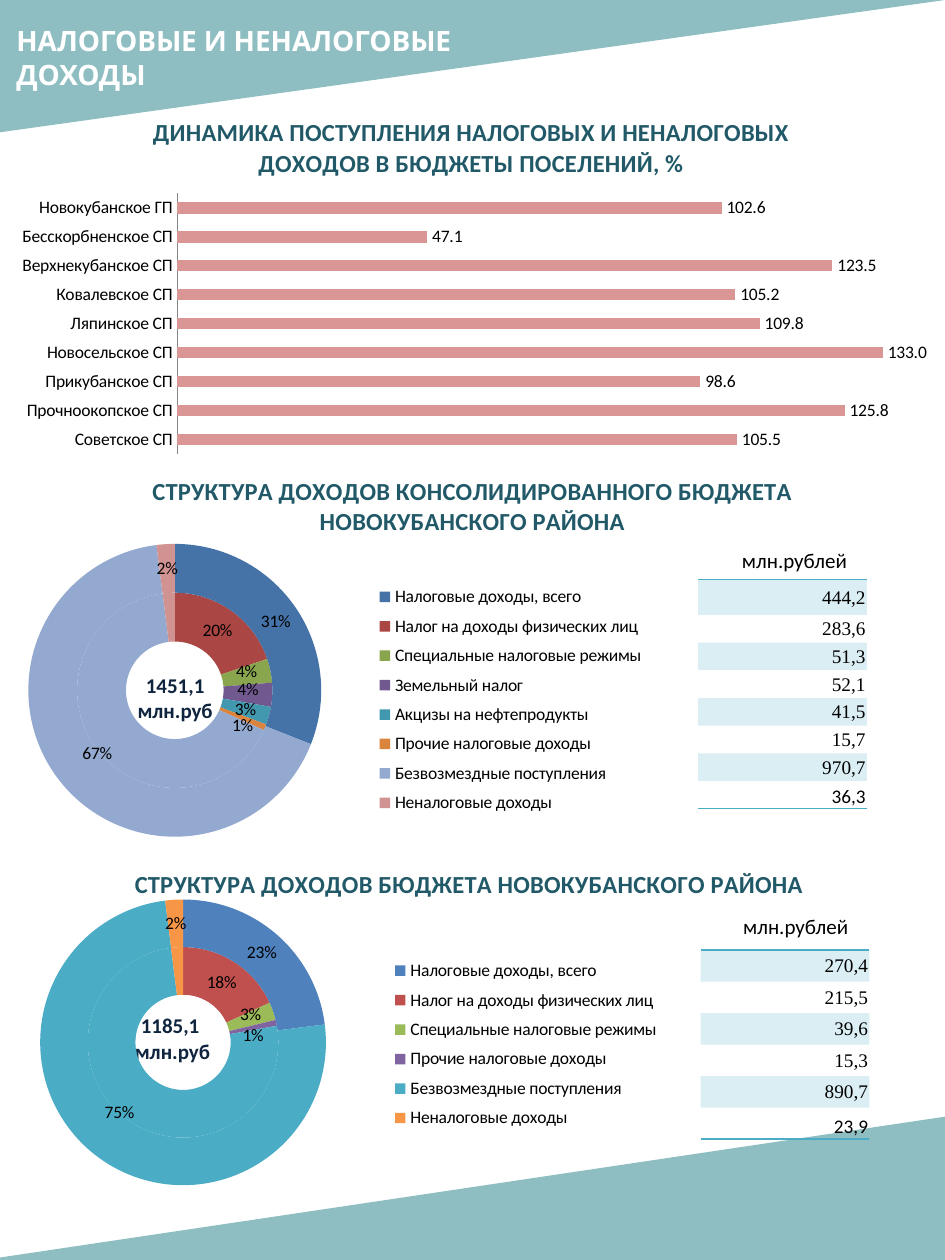
from dataclasses import dataclass

from lxml import etree
from pptx import Presentation
from pptx.chart import data
from pptx.dml import color
from pptx.enum import chart as kinds, shapes, text
from pptx.oxml import ns, parse_xml
from pptx.util import Inches, Pt


@dataclass(frozen=True)
class Theme:
    band: str = "519AA0"
    white: str = "FFFFFF"
    ink: str = "000000"
    navy: str = "0F243E"
    heading: str = "215968"
    bar: str = "D99694"
    axis: str = "868686"
    accent: str = "4BACC6"
    muted: tuple = ("4572A7", "AA4643", "89A54E", "71588F", "4198AF", "DB843D", "93A9CF", "D19392")
    bright: tuple = ("4F81BD", "C0504D", "9BBB59", "8064A2", "4BACC6", "F79646")
    title_face: str = "Karla"
    face: str = "Calibri"
    figure_face: str = "Times New Roman"
    title_size: int = 16
    heading_size: int = 14
    note_size: int = 12
    figure_size: int = 11
    chart_size: int = 10


def rgb(value):
    return color.RGBColor.from_string(value)


def chart_xml(tag, body):
    return parse_xml(f'<c:{tag} {ns.nsdecls("c", "a")}>{body}</c:{tag}>')


def manual_layout(parts):
    fields = "".join(f'<c:{name} val="{value}"/>' for name, value in parts)
    return chart_xml("layout", f"<c:manualLayout>{fields}</c:manualLayout>")


def box_layout(box, inner=False):
    target = [("layoutTarget", "inner")] if inner else []
    modes = [("xMode", "edge"), ("yMode", "edge")]
    return manual_layout(target + modes + list(zip("xywh", box)))


def hidden_label(index):
    return chart_xml("dLbl", f'<c:idx val="{index}"/><c:delete val="1"/>')


def moved_label(index, shift):
    flags = "".join(f'<c:show{part} val="{int(part == "Percent")}"/>' for part in
                    ("LegendKey", "Val", "CatName", "SerName", "Percent", "BubbleSize"))
    label = chart_xml("dLbl", f'<c:idx val="{index}"/>{flags}')
    label.insert(1, manual_layout(zip("xy", shift)))
    return label


class BudgetSlide:
    """Draws the elements of a budget page in one theme."""

    def __init__(self, slide, theme):
        self.slide, self.theme = slide, theme

    def style(self, font, size, face, ink, bold=False):
        font.size, font.name, font.bold = Pt(size), face, bold
        font.color.rgb = rgb(ink)

    def translucent(self, fill, ink, percent):
        fill.solid()
        fill.fore_color.rgb = rgb(ink)
        tone = fill._xPr.find(".//" + ns.qn("a:srgbClr"))
        etree.SubElement(tone, ns.qn("a:alpha"), val=str(percent * 1000))

    def wedge(self, box, flip):
        wedge = self.slide.shapes.add_shape(shapes.MSO_SHAPE.RIGHT_TRIANGLE, *map(Inches, box))
        wedge.rotation = 180
        wedge._element.spPr.find(ns.qn("a:xfrm")).set(flip, "1")
        wedge.shadow.inherit = False
        wedge.line.fill.background()
        self.translucent(wedge.fill, self.theme.band, 64)

    def title(self, words, box):
        title = self.slide.shapes.title
        self.slide.shapes._spTree.append(title._element)
        title.left, title.top, title.width, title.height = map(Inches, box)
        frame = title.text_frame
        frame.text = words
        frame.vertical_anchor = text.MSO_ANCHOR.TOP
        frame.auto_size = text.MSO_AUTO_SIZE.SHAPE_TO_FIT_TEXT
        line = frame.paragraphs[0]
        line.alignment = text.PP_ALIGN.LEFT
        self.style(line.font, self.theme.title_size, self.theme.title_face, self.theme.white, True)

    def note(self, words, box, ink, bold=False, wrap=True):
        frame = self.slide.shapes.add_textbox(*map(Inches, box)).text_frame
        frame.text = words
        frame.word_wrap = wrap
        frame.auto_size = text.MSO_AUTO_SIZE.SHAPE_TO_FIT_TEXT
        for line in frame.paragraphs:
            line.alignment = text.PP_ALIGN.CENTER if wrap else text.PP_ALIGN.LEFT
            self.style(line.font, self.theme.note_size, self.theme.face, ink, bold)

    def border(self, cell, side):
        cell._tc.get_or_add_tcPr().insert(0, parse_xml(
            f'<a:{side} {ns.nsdecls("a")} w="12700"><a:solidFill>'
            f'<a:srgbClr val="{self.theme.accent}"/></a:solidFill></a:{side}>'))

    def amounts(self, values, left, top, heights):
        frame = self.slide.shapes.add_table(
            len(values), 1, Inches(left), Inches(top), Inches(1.34), Inches(sum(heights)))
        table = frame.table
        table.first_row = table.horz_banding = False
        table._tbl.tblPr.find(ns.qn("a:tableStyleId")).text = "{2D5ABB26-0587-4C30-8999-92F81FD0307C}"
        last = len(values) - 1
        for row, (value, height) in enumerate(zip(values, heights)):
            table.rows[row].height = Inches(height)
            cell = table.cell(row, 0)
            cell.text = value
            cell.margin_left = cell.margin_right = cell.margin_top = Inches(0.01)
            cell.margin_bottom = 0
            cell.vertical_anchor = text.MSO_ANCHOR.BOTTOM if row == last else text.MSO_ANCHOR.MIDDLE
            line = cell.text_frame.paragraphs[0]
            line.alignment = text.PP_ALIGN.RIGHT
            face = self.theme.face if row == last else self.theme.figure_face
            self.style(line.font, self.theme.figure_size, face, self.theme.ink)
            if row % 2:
                cell.fill.background()
            else:
                self.translucent(cell.fill, self.theme.accent, 20)
        self.border(table.cell(0, 0), "lnT")
        self.border(table.cell(last, 0), "lnB")

    def chart(self, kind, heading, box, names, rows):
        source = data.CategoryChartData()
        source.categories = names
        for number, values in enumerate(rows, 1):
            source.add_series(f"Series {number}", values)
        chart = self.slide.shapes.add_chart(kind, *map(Inches, box), source).chart
        self.style(chart.font, self.theme.chart_size, self.theme.face, self.theme.ink)
        chart._chartSpace.chart.addnext(chart_xml("spPr", "<a:noFill/><a:ln><a:noFill/></a:ln>"))
        chart.has_title = True
        chart.chart_title.include_in_layout = False
        chart.chart_title.text_frame.text = heading
        line = chart.chart_title.text_frame.paragraphs[0]
        self.style(line.font, self.theme.heading_size, self.theme.face, self.theme.heading, True)
        chart.has_legend = False
        return chart

    def bars(self, heading, box, growth):
        chart = self.chart(kinds.XL_CHART_TYPE.BAR_CLUSTERED, heading, box, list(growth), [list(growth.values())])
        plot = chart.plots[0]
        plot.gap_width, plot.overlap, plot.vary_by_categories = 150, -25, False
        settlements = chart.category_axis
        settlements.reverse_order = True
        settlements.major_tick_mark = kinds.XL_TICK_MARK.NONE
        settlements.format.line.color.rgb = rgb(self.theme.axis)
        chart.value_axis.visible = chart.value_axis.has_major_gridlines = False
        chart.value_axis.minimum_scale = 0
        series = plot.series[0]
        series.format.fill.solid()
        series.format.fill.fore_color.rgb = rgb(self.theme.bar)
        labels = series.data_labels
        labels.show_value = True
        labels.number_format, labels.number_format_is_linked = "#,##0.0", False

    def rings(self, heading, box, names, rows, colors, plot_box, legend_box, inner_shifts, grant_shift):
        chart = self.chart(kinds.XL_CHART_TYPE.DOUGHNUT, heading, box, names, rows)
        chart.plots[0].vary_by_categories = True
        grants = len(names) - 2
        inner = [moved_label(index, shift) for index, shift in inner_shifts.items()]
        inner += [hidden_label(grants), hidden_label(grants + 1)]
        for series, special in zip(chart.plots[0].series, (inner, [moved_label(grants, grant_shift)])):
            for index, ink in enumerate(colors):
                fill = series.points[index].format.fill
                fill.solid()
                fill.fore_color.rgb = rgb(ink)
            labels = series.data_labels
            labels.show_value, labels.show_percentage = False, True
            labels.number_format, labels.number_format_is_linked = "0%", False
            for place, label in enumerate(special):
                labels._element.insert(place, label)
        chart.has_legend = True
        chart.legend.position = kinds.XL_LEGEND_POSITION.RIGHT
        chart.legend.include_in_layout = False
        area, legend = chart._chartSpace.chart.plotArea, chart.legend._element
        for holder in (area, legend):
            for old in holder.findall(ns.qn("c:layout")):
                holder.remove(old)
        area.insert(0, box_layout(plot_box, True))
        legend.find(ns.qn("c:overlay")).addprevious(box_layout(legend_box))


def main():
    deck = Presentation()
    deck.slide_width, deck.slide_height = Inches(7.5), Inches(10)
    theme = Theme()
    page = BudgetSlide(deck.slides.add_slide(deck.slide_layouts[5]), theme)
    page.wedge((0, 0, 7.5, 1.05), "flipH")
    page.wedge((-0.13, 8.86, 7.65, 1.14), "flipV")
    page.title("НАЛОГОВЫЕ И НЕНАЛОГОВЫЕ ДОХОДЫ", (0.03, 0.14, 4.51, 0.64))
    page.note("1451,1 млн.руб", (0.95, 5.29, 0.88, 0.5), theme.navy, True)
    page.note("1185,1\n млн.руб", (0.91, 7.99, 0.88, 0.5), theme.navy, True)
    page.amounts("444,2 283,6 51,3 52,1 41,5 15,7 970,7 36,3".split(), 5.54, 4.6, [0.28] + [0.22] * 7)
    page.amounts("270,4 215,5 39,6 15,3 890,7 23,9".split(), 5.56, 7.54, [0.25] * 6)
    for left, top in ((5.79, 4.3), (5.8, 7.2)):
        page.note("млн.рублей", (left, top, 1.07, 0.3), theme.ink, wrap=False)
    page.bars("ДИНАМИКА ПОСТУПЛЕНИЯ НАЛОГОВЫХ И НЕНАЛОГОВЫХ ДОХОДОВ В БЮДЖЕТЫ ПОСЕЛЕНИЙ, %",
              (0.03, 0.77, 7.42, 2.89),
              {"Новокубанское ГП": 102.6, "Бесскорбненское СП": 47.1, "Верхнекубанское СП": 123.5,
               "Ковалевское СП": 105.2, "Ляпинское СП": 109.8, "Новосельское СП": 133,
               "Прикубанское СП": 98.6, "Прочноокопское СП": 125.8, "Советское СП": 105.5})
    taxes = ["Налоговые доходы, всего", "Налог на доходы физических лиц", "Специальные налоговые режимы"]
    others = ["Прочие налоговые доходы", "Безвозмездные поступления", "Неналоговые доходы"]
    page.rings("СТРУКТУРА ДОХОДОВ КОНСОЛИДИРОВАННОГО БЮДЖЕТА НОВОКУБАНСКОГО РАЙОНА",
               (0, 3.61, 7.5, 3.04), taxes + ["Земельный налог", "Акцизы на нефтепродукты"] + others,
               [[None, 20, 4, 4, 3, 1, 67, 2], [31] + [None] * 5 + [67, 2]], theme.muted,
               (0.03, 0.23, 0.31, 0.77), (0.39, 0.32, 0.3, 0.64),
               {2: (0, -0.01), 3: (0, -0.01), 5: (0, 0.02)}, (0.02, -0.03))
    page.rings("СТРУКТУРА ДОХОДОВ БЮДЖЕТА НОВОКУБАНСКОГО РАЙОНА",
               (0, 6.73, 7.45, 3.15), taxes + others,
               [[None, 18, 3, 1, 75, 2], [23] + [None] * 3 + [75, 2]], theme.bright,
               (0.04, 0.13, 0.31, 0.72), (0.41, 0.26, 0.3, 0.47),
               {2: (0, -0.01), 3: (0, 0.02)}, (0.01, -0.06))
    deck.save("out.pptx")


if __name__ == "__main__":
    main()
